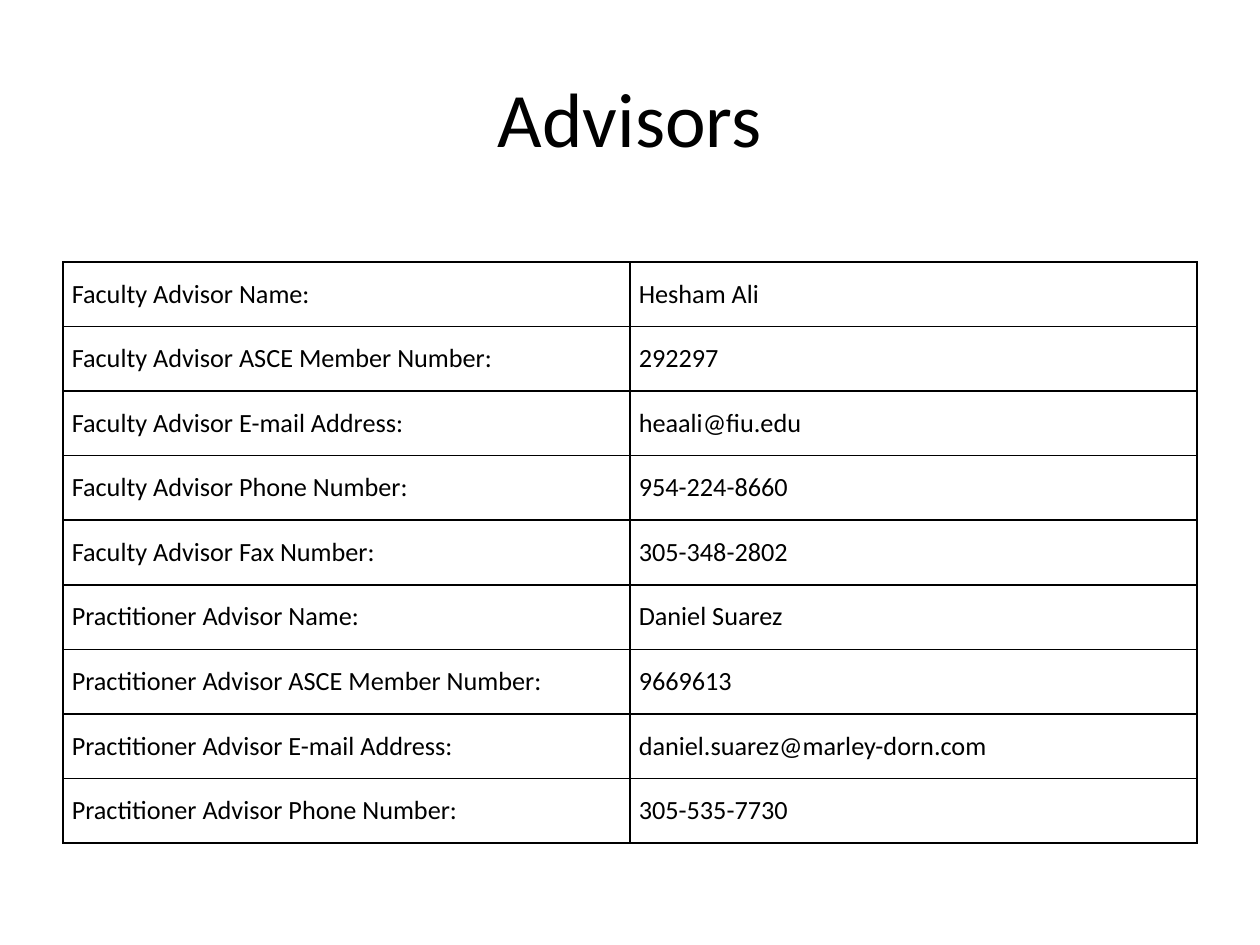
"""Build the Advisors slide with its contact table."""
import dataclasses

import lxml.etree
import pptx
import pptx.dml.color
import pptx.enum.text
import pptx.oxml.ns
import pptx.util

WIDTH = pptx.util.Inches(10)
HEIGHT = pptx.util.Inches(7.5)
FONT = "Calibri"
INK = "000000"
PAPER = "FFFFFF"
ALIGN = pptx.enum.text.PP_ALIGN
MIDDLE = pptx.enum.text.MSO_ANCHOR.MIDDLE


@dataclasses.dataclass(frozen=True)
class Box:
    """A frame in shares of the slide's size."""

    left: float
    top: float
    width: float
    height: float

    def frame(self) -> tuple[int, int, int, int]:
        """Return the frame as lengths."""
        return (
            round(self.left * WIDTH),
            round(self.top * HEIGHT),
            round(self.width * WIDTH),
            round(self.height * HEIGHT),
        )


@dataclasses.dataclass(frozen=True)
class Entry:
    """A label and its value."""

    label: str
    value: str


@dataclasses.dataclass(frozen=True)
class Person:
    """A role and its entries."""

    role: str
    entries: tuple[Entry, ...]


TITLE = Box(0.05, 0.04, 0.9, 1 / 6)
GRID = Box(0.05, 2.08 / 7.5, 0.9, 4.61 / 7.5)
PEOPLE = (
    Person("Faculty Advisor", (
        Entry("Name", "Hesham Ali"),
        Entry("ASCE Member Number", "292297"),
        Entry("E-mail Address", "heaali@fiu.edu"),
        Entry("Phone Number", "954-224-8660"),
        Entry("Fax Number", "305-348-2802"),
    )),
    Person("Practitioner Advisor", (
        Entry("Name", "Daniel Suarez"),
        Entry("ASCE Member Number", "9669613"),
        Entry("E-mail Address", "daniel.suarez@marley-dorn.com"),
        Entry("Phone Number", "305-535-7730"),
    )),
)


def color(code: str) -> pptx.dml.color.RGBColor:
    """Turn a hex string into a colour."""
    return pptx.dml.color.RGBColor.from_string(code)


def write(frame, text: str, size: float, align: ALIGN) -> None:
    """Write one styled paragraph into a text frame."""
    para = frame.paragraphs[0]
    para.text = text
    para.alignment = align
    para.font.name = FONT
    para.font.size = pptx.util.Pt(size)
    para.font.color.rgb = color(INK)


def border(cell, width: float) -> None:
    """Draw all four borders of a cell."""
    qn = pptx.oxml.ns.qn
    props = cell._tc.get_or_add_tcPr()
    for spot, side in enumerate(("a:lnL", "a:lnR", "a:lnT", "a:lnB")):
        line = lxml.etree.Element(qn(side), w=str(pptx.util.Pt(width)))
        fill = lxml.etree.SubElement(line, qn("a:solidFill"))
        lxml.etree.SubElement(fill, qn("a:srgbClr"), val=INK)
        props.insert(spot, line)


def fill_cell(cell, text: str) -> None:
    """Style a table cell and write its text."""
    cell.fill.solid()
    cell.fill.fore_color.rgb = color(PAPER)
    cell.vertical_anchor = MIDDLE
    cell.margin_left = cell.margin_right = pptx.util.Inches(0.07)
    cell.margin_top = cell.margin_bottom = 0
    write(cell.text_frame, text, 15, ALIGN.JUSTIFY)
    cell.text_frame.paragraphs[0].space_before = pptx.util.Pt(6)
    border(cell, 1)


def add_title(slide, text: str) -> None:
    """Add the centred title."""
    frame = slide.shapes.add_textbox(*TITLE.frame()).text_frame
    frame.word_wrap = True
    frame.vertical_anchor = MIDDLE
    write(frame, text, 44, ALIGN.CENTER)


def add_grid(slide, people: tuple[Person, ...]) -> None:
    """Add the table with one row for each entry."""
    rows = [
        (f"{person.role} {entry.label}:", entry.value)
        for person in people
        for entry in person.entries
    ]
    table = slide.shapes.add_table(len(rows), 2, *GRID.frame()).table
    table.first_row = table.horz_banding = False
    for row, texts in enumerate(rows):
        for col, text in enumerate(texts):
            fill_cell(table.cell(row, col), text)


def main() -> None:
    """Build and save the slide."""
    deck = pptx.Presentation()
    deck.slide_width, deck.slide_height = WIDTH, HEIGHT
    slide = deck.slides.add_slide(deck.slide_layouts[6])
    add_title(slide, "Advisors")
    add_grid(slide, PEOPLE)
    deck.save("out.pptx")


if __name__ == "__main__":
    main()
